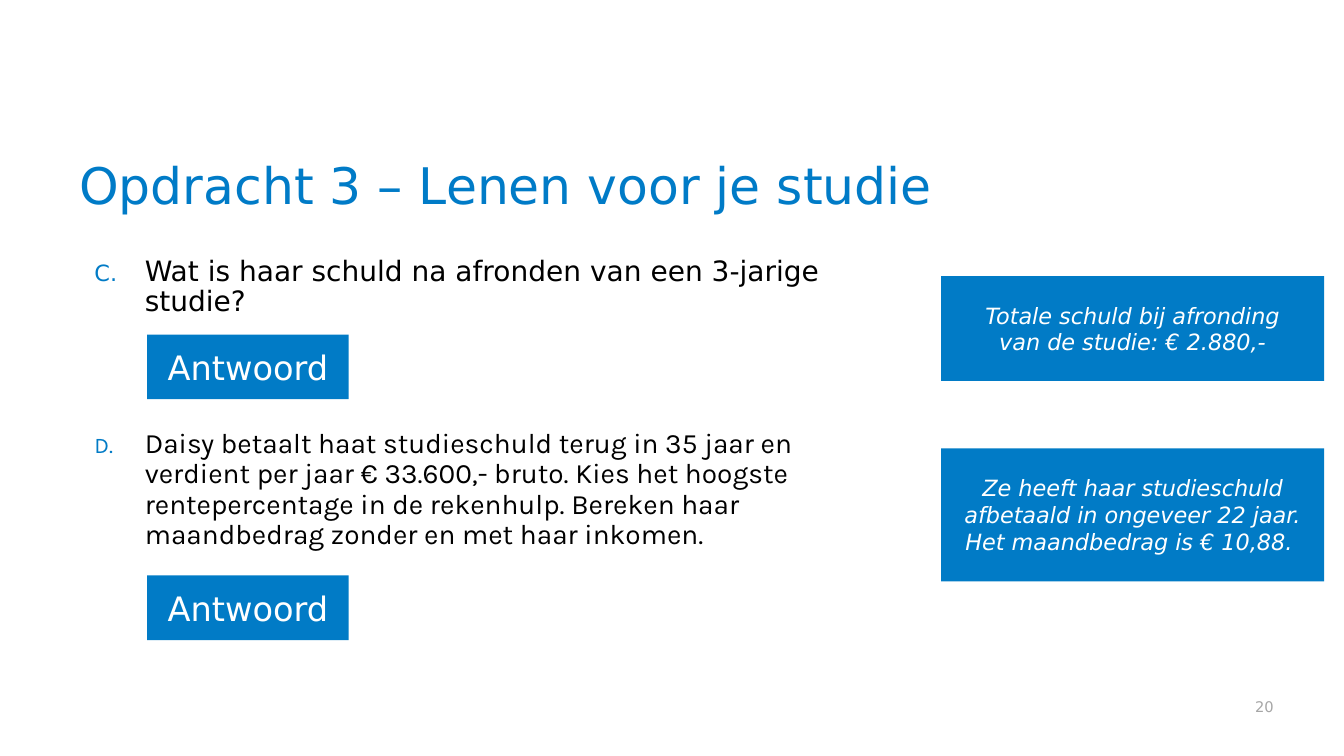
from lxml import etree
from pptx import Presentation
from pptx.dml.color import RGBColor
from pptx.enum.shapes import MSO_SHAPE
from pptx.enum.text import MSO_ANCHOR, PP_ALIGN
from pptx.oxml.ns import qn
from pptx.util import Cm, Pt

RECTANGLE = MSO_SHAPE.RECTANGLE
LEFT, CENTER, RIGHT = PP_ALIGN.LEFT, PP_ALIGN.CENTER, PP_ALIGN.RIGHT
MIDDLE, BOTTOM = MSO_ANCHOR.MIDDLE, MSO_ANCHOR.BOTTOM
SANS, KARLA = "DejaVu Sans", "Karla"
COLORS = {
    "title": "007BC7",
    "box": "017BC6",
    "question": "000000",
    "white": "FFFFFF",
    "number": "A6A6A6",
}


def write(paragraph, text, size, color, font=SANS, align=LEFT, italic=False):
    paragraph.alignment = align
    run = paragraph.add_run()
    run.text = text
    run.font.name = font
    run.font.size = Pt(size)
    run.font.italic = italic
    run.font.color.rgb = RGBColor.from_string(COLORS[color])


def add_text_frame(left, top, width, height):
    text_box = slide.shapes.add_textbox(Cm(left), Cm(top), Cm(width), Cm(height))
    text_box.text_frame.word_wrap = True
    return text_box.text_frame


presentation = Presentation()
presentation.slide_width = Cm(33.87)
presentation.slide_height = Cm(19.05)
slide = presentation.slides.add_slide(presentation.slide_layouts[6])

# Questions, lettered from C; the space before D leaves room for an answer box
questions = [
    ("Wat is haar schuld na afronden van een 3-jarige studie?", SANS, 0),
    ("Daisy betaalt haat studieschuld terug in 35 jaar en verdient per jaar "
     "€ 33.600,- bruto. Kies het hoogste rentepercentage in de rekenhulp. "
     "Bereken haar maandbedrag zonder en met haar inkomen.", KARLA, 80),
]
frame = add_text_frame(1.75, 6.35, 21.23, 10.92)
for index, (question, font, space_before) in enumerate(questions):
    paragraph = frame.add_paragraph() if index else frame.paragraphs[0]
    properties = paragraph._p.get_or_add_pPr()
    properties.set("marL", str(Cm(1.65)))
    properties.set("indent", str(Cm(-1.27)))
    bullet_color = etree.SubElement(properties, qn("a:buClr"))
    etree.SubElement(bullet_color, qn("a:srgbClr"), val=COLORS["box"])
    etree.SubElement(properties, qn("a:buSzPct"), val="80000")
    etree.SubElement(properties, qn("a:buAutoNum"), type="alphaUcPeriod", startAt="3")
    paragraph.line_spacing = 0.9
    paragraph.space_before = Pt(space_before)
    write(paragraph, question, 20, "question", font)

# Title
frame = add_text_frame(1.75, 2.92, 30.35, 2.64)
frame.vertical_anchor = BOTTOM
frame.paragraphs[0].line_spacing = 0.9
write(frame.paragraphs[0], "Opdracht 3 – Lenen voor je studie", 36, "title")

# Slide number
frame = add_text_frame(18.21, 17.27, 13.89, 0.89)
frame.vertical_anchor = BOTTOM
frame.margin_right = 0
write(frame.paragraphs[0], "20", 10.5, "number", align=RIGHT)

# Answer buttons and the answers themselves
boxes = [
    (3.71, 8.43, 5.08, 1.63, 24, False, ["Antwoord"]),
    (3.71, 14.5, 5.08, 1.63, 24, False, ["Antwoord"]),
    (23.72, 11.3, 9.65, 3.35, 16, True,
     ["Ze heeft haar studieschuld afbetaald in ongeveer 22 jaar. "
      "Het maandbedrag is € 10,88. "]),
    (23.72, 6.96, 9.65, 2.64, 16, True,
     ["Totale schuld bij afronding", "van de studie: € 2.880,-"]),
]
for left, top, width, height, size, italic, lines in boxes:
    box = slide.shapes.add_shape(RECTANGLE, Cm(left), Cm(top), Cm(width), Cm(height))
    box.shadow.inherit = False
    box.fill.solid()
    box.fill.fore_color.rgb = RGBColor.from_string(COLORS["box"])
    box.line.fill.background()
    frame = box.text_frame
    frame.word_wrap = True
    frame.vertical_anchor = MIDDLE
    for index, line in enumerate(lines):
        paragraph = frame.add_paragraph() if index else frame.paragraphs[0]
        write(paragraph, line, size, "white", align=CENTER, italic=italic)

presentation.save("out.pptx")
